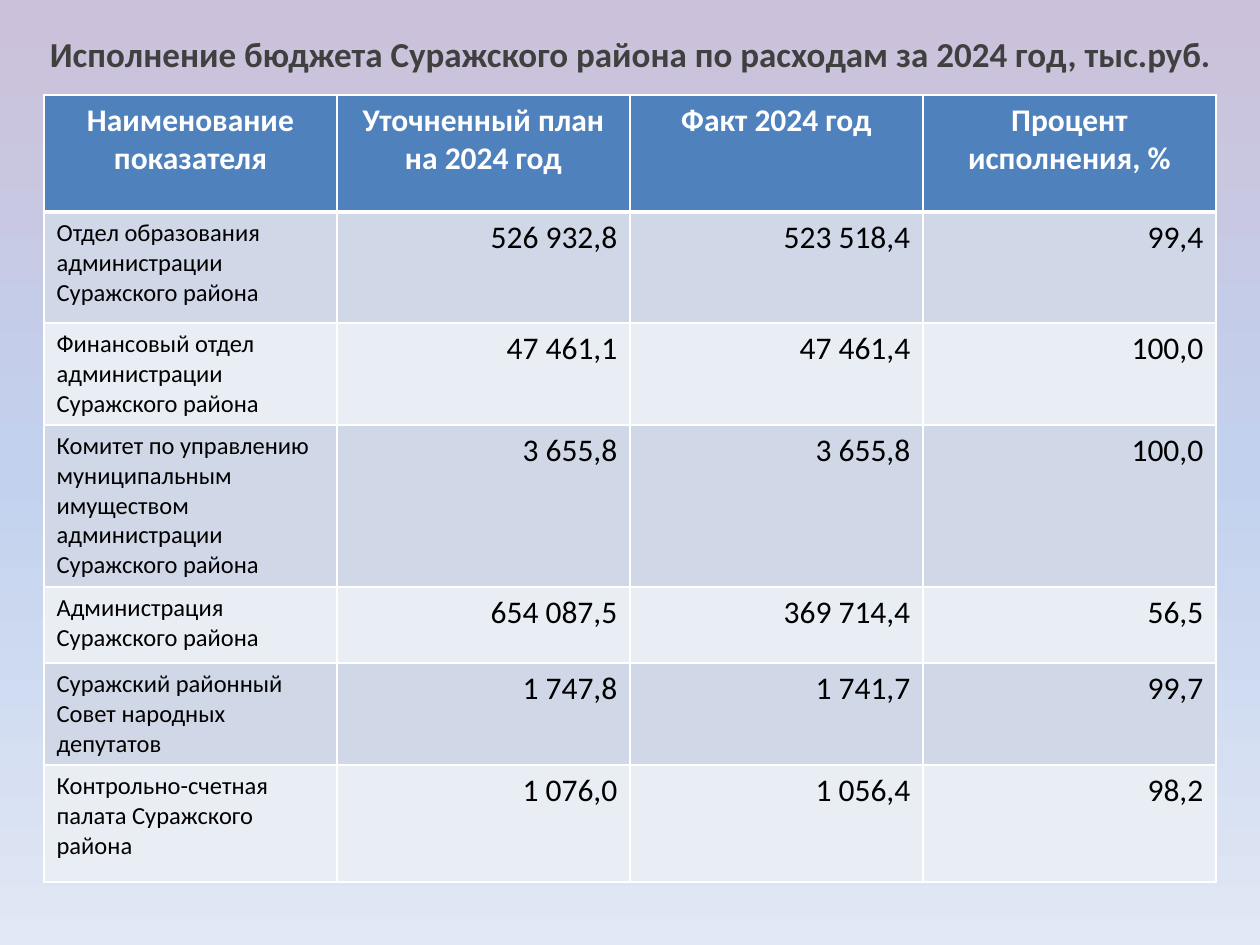
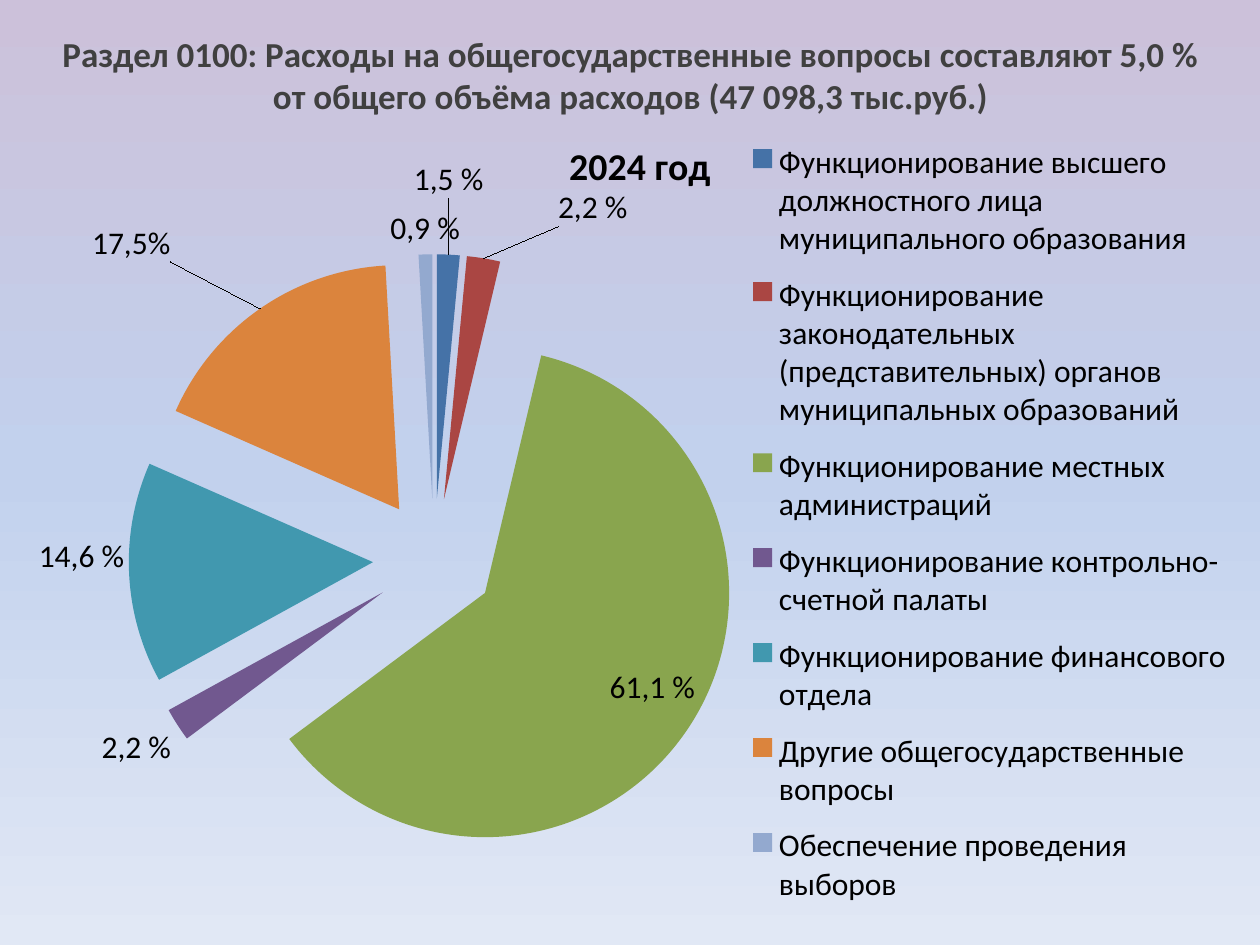
from lxml.etree import fromstring
from copy import deepcopy
from pptx import Presentation
from pptx.chart.data import CategoryChartData
from pptx.dml.color import RGBColor
from pptx.enum.chart import XL_CHART_TYPE, XL_LABEL_POSITION, XL_LEGEND_POSITION
from pptx.enum.text import PP_ALIGN
from pptx.oxml.ns import nsdecls, qn
from pptx.util import Pt

PX = 914400 / 126
COLORS = {
    "top": "CCC1DA", "mid": "C2D1ED", "low": "E1E8F5",
    "title": "404040", "text": "000000", "white": "FFFFFF",
    "head": "4F81BD", "odd": "D0D8E8", "even": "E9EDF4",
    "mayor": "4572A7", "council": "AA4643", "admin": "89A54E",
    "audit": "71588F", "finance": "4198AF", "other": "DB843D", "vote": "93A9CF",
}
FORMATS = {
    "title": {"name": "Calibri", "size": Pt(20), "bold": True},
    "head": {"name": "Calibri", "size": Pt(18), "bold": True},
    "name": {"name": "Calibri", "size": Pt(14), "bold": False},
    "value": {"name": "Calibri", "size": Pt(18), "bold": False},
    "chart": {"name": "Calibri", "size": Pt(21.6), "bold": True},
}


def style(font, kind, color):
    for key, val in FORMATS[kind].items():
        setattr(font, key, val)
    font.color.rgb = RGBColor.from_string(COLORS[color])


def place(node, index, tags):
    """Give a chart part a manual layout, as fractions of the chart."""
    for old in node.findall(qn("c:layout")):
        node.remove(old)
    items = "".join(f'<c:{tag} val="{val}"/>' for tag, val in tags.items())
    node.insert(index, fromstring(
        f'<c:layout {nsdecls("c")}><c:manualLayout>{items}</c:manualLayout></c:layout>'))


deck = Presentation()
deck.slide_width, deck.slide_height = round(1260 * PX), round(945 * PX)

# Shared background and title
titles = [
    "Исполнение бюджета Суражского района по расходам за 2024 год, тыс.руб.",
    "Раздел 0100: Расходы на общегосударственные вопросы составляют 5,0 % "
    "от общего объёма расходов (47 098,3 тыс.руб.)",
]
slides = []
for title in titles:
    slide = deck.slides.add_slide(deck.slide_layouts[6])
    slides.append(slide)
    fill = slide.background.fill
    fill.gradient()
    fill.gradient_angle = 270
    stops = next(slide.element.iter(qn("a:gsLst")))
    stops.insert(1, deepcopy(stops[0]))
    for stop, key, pos in zip(fill.gradient_stops, ("top", "mid", "low"), (0, 0.5, 1)):
        stop.color.rgb = RGBColor.from_string(COLORS[key])
        stop.position = pos
    box = slide.shapes.add_textbox(*[round(n * PX) for n in (35, 26, 1191, 69)])
    frame = box.text_frame
    frame.word_wrap = True
    par = frame.paragraphs[0]
    par.alignment = PP_ALIGN.CENTER
    run = par.add_run()
    run.text = title
    style(run.font, "title", "title")

# Budget table
rows = [
    ("Наименование показателя", "Уточненный план на 2024 год", "Факт 2024 год",
     "Процент исполнения, %"),
    ("Отдел образования администрации Суражского района",
     "526 932,8", "523 518,4", "99,4"),
    ("Финансовый отдел администрации Суражского района",
     "47 461,1", "47 461,4", "100,0"),
    ("Комитет по управлению муниципальным имуществом администрации Суражского района",
     "3 655,8", "3 655,8", "100,0"),
    ("Администрация\nСуражского района", "654 087,5", "369 714,4", "56,5"),
    ("Суражский районный Совет народных депутатов", "1 747,8", "1 741,7", "99,7"),
    ("Контрольно-счетная палата Суражского района", "1 076,0", "1 056,4", "98,2"),
]
heights = [117, 111, 102, 162, 76, 102, 117]
table = slides[0].shapes.add_table(
    len(rows), 4, *[round(n * PX) for n in (44, 95, 1172, sum(heights))]).table
for col in table.columns:
    col.width = round(293 * PX)
for r, (row, height) in enumerate(zip(rows, heights)):
    table.rows[r].height = round(height * PX)
    for c, text in enumerate(row):
        cell = table.cell(r, c)
        cell.text = text
        if r == 0:
            kind, align, color, back = "head", PP_ALIGN.CENTER, "white", "head"
        else:
            kind, align = ("value", PP_ALIGN.RIGHT) if c else ("name", PP_ALIGN.LEFT)
            color, back = "text", "odd" if r % 2 else "even"
        for par in cell.text_frame.paragraphs:
            par.alignment = align
            style(par.runs[0].font, kind, color)
        cell.fill.solid()
        cell.fill.fore_color.rgb = RGBColor.from_string(COLORS[back])
        props = cell._tc.get_or_add_tcPr()
        for i, side in enumerate("LRTB"):
            thick = (side, r) in (("B", 0), ("T", 1))
            props.insert(i, fromstring(
                f'<a:ln{side} {nsdecls("a")} w="{Pt(3 if thick else 1)}"><a:solidFill>'
                f'<a:srgbClr val="{COLORS["white"]}"/></a:solidFill></a:ln{side}>'))

# Pie chart: name, value, colour, label, label shift
parts = [
    ("Функционирование высшего должностного лица муниципального образования",
     1.5, "mayor", "1,5 %", (0, -0.06)),
    ("Функционирование законодательных (представительных) органов "
     "муниципальных образований", 2.2, "council", "2,2 %", (0.06, -0.03)),
    ("Функционирование местных администраций", 61.1, "admin", "61,1 %", (0.01, -0.02)),
    ("Функционирование контрольно-счетной палаты", 2.2, "audit", "2,2 %", (0, 0)),
    ("Функционирование финансового отдела", 14.6, "finance", "14,6 %", (-0.08, -0.02)),
    ("Другие общегосударственные вопросы", 17.5, "other", "17,5%", (-0.07, -0.05)),
    ("Обеспечение проведения выборов", 0.9, "vote", "0,9 %", (0, 0)),
]
data = CategoryChartData()
data.categories = [part[0] for part in parts]
data.add_series("2024 год", [part[1] for part in parts])
chart = slides[1].shapes.add_chart(
    XL_CHART_TYPE.PIE, *[round(n * PX) for n in (25, 116, 1221, 814)], data).chart
style(chart.font, "value", "text")
plot = chart.plots[0]
plot.vary_by_categories = True
series = plot.series[0]
series._element.find(qn("c:tx")).addnext(
    fromstring(f'<c:explosion {nsdecls("c")} val="25"/>'))
series.data_labels.show_value = True

# Slices and their labels; labels anchored inside have room for one line
for i, (name, value, color, text, (dx, dy)) in enumerate(parts):
    point = series.points[i]
    point.format.fill.solid()
    point.format.fill.fore_color.rgb = RGBColor.from_string(COLORS[color])
    label = point.data_label
    run = label.text_frame.paragraphs[0].add_run()
    run.text = text
    style(run.font, "value", "text")
    inside = color in ("admin", "finance")
    label.position = (XL_LABEL_POSITION.INSIDE_END if inside
                      else XL_LABEL_POSITION.OUTSIDE_END)
    if dx or dy:
        place(series._element.findall(".//" + qn("c:dLbl"))[i], 1, {"x": dx, "y": dy})

# Chart title, legend and plot area
chart.has_title = True
run = chart.chart_title.text_frame.paragraphs[0].add_run()
run.text = "2024 год"
style(run.font, "chart", "text")
chart.has_legend = True
chart.legend.position = XL_LEGEND_POSITION.CORNER
chart.legend.include_in_layout = False
style(chart.legend.font, "value", "text")
edge = {"xMode": "edge", "yMode": "edge"}
space = chart._chartSpace
place(next(space.iter(qn("c:title"))), 1, {**edge, "x": 0.44, "y": 0.02})
place(next(space.iter(qn("c:legend"))), 1,
      {**edge, "x": 0.59, "y": 0.01, "w": 0.4, "h": 0.98})
place(next(space.iter(qn("c:plotArea"))), 0,
      {"layoutTarget": "inner", **edge, "x": 0.06, "y": 0.17, "w": 0.55, "h": 0.75})

deck.save("out.pptx")
